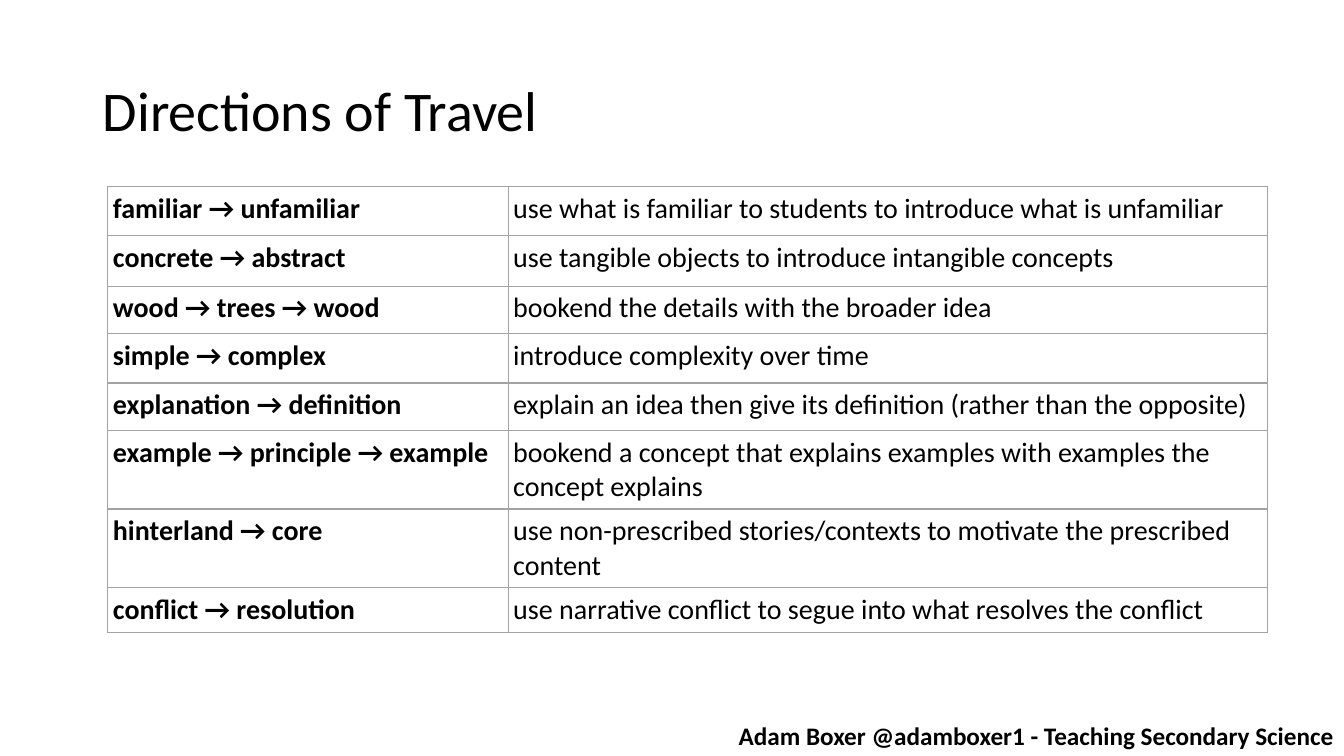
from lxml.etree import SubElement
from pptx import Presentation
from pptx.dml.color import RGBColor
from pptx.enum.text import MSO_ANCHOR, MSO_AUTO_SIZE, PP_ALIGN
from pptx.oxml.ns import qn
from pptx.util import Pt

PX = 9144
COLORS = {"ink": "000000", "rule": "A3A3A3", "page": "FFFFFF"}
TITLE_BOX = (92, 40, 1150, 145)
TABLE_BOX = (107, 185, 1150, 378)
CREDIT_BOX = (667, 710, 666, 40)
COLUMN_WIDTHS = (397, 753)
ROW_HEIGHTS = (49, 50, 47, 49, 47, 48, 48, 40)
CELL_INSET = 5
DIRECTIONS = [
    ("familiar → unfamiliar", "use what is familiar to students to introduce what is unfamiliar"),
    ("concrete → abstract", "use tangible objects to introduce intangible concepts"),
    ("wood → trees → wood", "bookend the details with the broader idea"),
    ("simple → complex", "introduce complexity over time"),
    ("explanation → definition", "explain an idea then give its definition (rather than the opposite)"),
    ("example → principle → example", "bookend a concept that explains examples with examples the concept explains"),
    ("hinterland → core", "use non-prescribed stories/contexts to motivate the prescribed content"),
    ("conflict → resolution", "use narrative conflict to segue into what resolves the conflict"),
]


def scaled(box):
    return [length * PX for length in box]


def set_all(target, values):
    for name, value in values.items():
        setattr(target, name, value)


def write_text(frame, text, size, bold=False, **para_format):
    para = frame.paragraphs[0]
    set_all(para, para_format)
    span = para.add_run()
    span.text = text
    set_all(span.font, {"name": "Calibri", "size": Pt(size), "bold": bold})
    span.font.color.rgb = RGBColor.from_string(COLORS["ink"])


def outline_cell(cell):
    properties = cell._tc.get_or_add_tcPr()
    for position, side in enumerate(("lnL", "lnR", "lnT", "lnB")):
        line = SubElement(properties, qn(f"a:{side}"), w=str(Pt(1)))
        fill = SubElement(line, qn("a:solidFill"))
        SubElement(fill, qn("a:srgbClr"), val=COLORS["rule"])
        properties.remove(line)
        properties.insert(position, line)


def add_title(page, box):
    title = page.shapes.title
    set_all(title, dict(zip(("left", "top", "width", "height"), scaled(box))))
    set_all(title.text_frame, {
        "auto_size": MSO_AUTO_SIZE.NONE,
        "vertical_anchor": MSO_ANCHOR.MIDDLE,
        "word_wrap": True,
    })
    write_text(title.text_frame, "Directions of Travel", 40,
               alignment=PP_ALIGN.LEFT, line_spacing=0.9)


def add_directions(page, box):
    table = page.shapes.add_table(len(DIRECTIONS), len(COLUMN_WIDTHS), *scaled(box)).table
    set_all(table, {"first_row": False, "horz_banding": False})
    for column, width in zip(table.columns, COLUMN_WIDTHS):
        column.width = width * PX
    for row, height, texts in zip(table.rows, ROW_HEIGHTS, DIRECTIONS):
        row.height = height * PX
        for index, (cell, text) in enumerate(zip(row.cells, texts)):
            set_all(cell, {f"margin_{side}": CELL_INSET * PX
                           for side in ("left", "right", "top", "bottom")})
            cell.fill.solid()
            cell.fill.fore_color.rgb = RGBColor.from_string(COLORS["page"])
            outline_cell(cell)
            write_text(cell.text_frame, text, 20, bold=index == 0)


def add_credit(page, box):
    frame = page.shapes.add_textbox(*scaled(box)).text_frame
    set_all(frame, {"word_wrap": True, "auto_size": MSO_AUTO_SIZE.SHAPE_TO_FIT_TEXT})
    write_text(frame, "Adam Boxer @adamboxer1 - Teaching Secondary Science", 18,
               bold=True, alignment=PP_ALIGN.RIGHT)


def main():
    deck = Presentation()
    set_all(deck, {"slide_width": 1333 * PX, "slide_height": 750 * PX})
    page = deck.slides.add_slide(deck.slide_layouts[5])
    add_title(page, TITLE_BOX)
    add_directions(page, TABLE_BOX)
    add_credit(page, CREDIT_BOX)
    deck.save("out.pptx")


if __name__ == "__main__":
    main()
